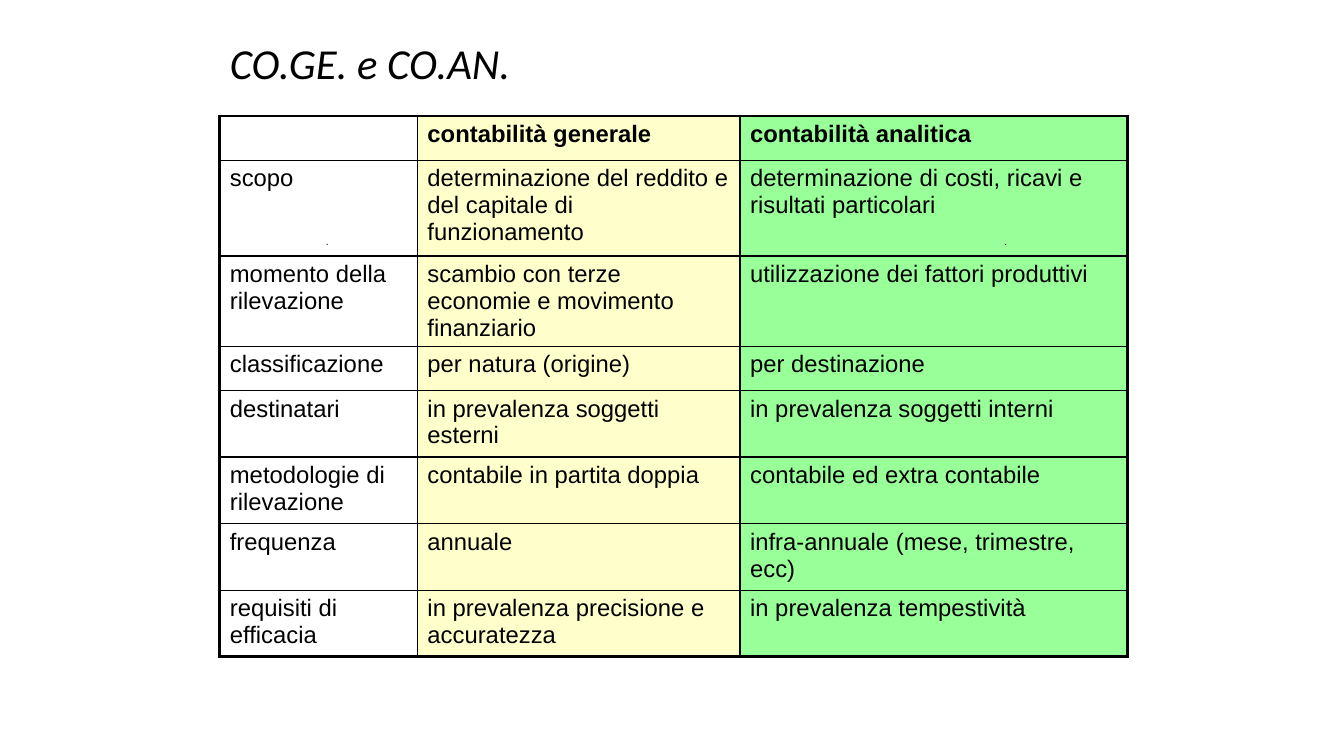
from lxml import etree
from pptx import Presentation
from pptx.dml.color import RGBColor
from pptx.enum.shapes import MSO_SHAPE
from pptx.enum.text import MSO_ANCHOR, MSO_AUTO_SIZE, PP_ALIGN
from pptx.oxml.ns import qn
from pptx.util import Inches, Pt

RECTANGLE = MSO_SHAPE.RECTANGLE
MIDDLE = MSO_ANCHOR.MIDDLE
NO_AUTOFIT = MSO_AUTO_SIZE.NONE
LEFT = PP_ALIGN.LEFT

HEADING = "CO.GE. e CO.AN."
COMPARISON = [
    ("", "contabilità generale", "contabilità analitica"),
    ("scopo", "determinazione del reddito e del capitale di funzionamento",
     "determinazione di costi, ricavi e risultati particolari"),
    ("momento della rilevazione", "scambio con terze economie e movimento finanziario",
     "utilizzazione dei fattori produttivi"),
    ("classificazione", "per natura (origine)", "per destinazione"),
    ("destinatari", "in prevalenza soggetti esterni", "in prevalenza soggetti interni"),
    ("metodologie di rilevazione", "contabile in partita doppia", "contabile ed extra contabile"),
    ("frequenza", "annuale", "infra-annuale (mese, trimestre, ecc)"),
    ("requisiti di efficacia", "in prevalenza precisione e accuratezza",
     "in prevalenza tempestività"),
]
COLUMN_WIDTHS = [1.96, 3.2, 3.84]
ROW_HEIGHTS = [0.44, 0.95, 0.8, 0.44, 0.66, 0.66, 0.66, 0.66]
TABLE_LEFT, TABLE_TOP = 2.18, 1.15
DOT_LEFTS, DOT_TOP, DOT_SIZE = [3.24, 9.97], 2.42, 0.01

THEME = {
    "ink": "000000",
    "columns": ["FFFFFF", "FFFFCC", "99FF99"],
    "heading": {"name": "Calibri", "size": Pt(30.5), "italic": True, "bold": False},
    "cell": {"name": "Arial", "size": Pt(17), "bold": False},
    "outer_line": Pt(2.25),
    "inner_line": Pt(1),
}
INK = RGBColor.from_string(THEME["ink"])
INSETS = {
    "margin_left": Inches(0.1), "margin_right": Inches(0.1),
    "margin_top": Inches(0.05), "margin_bottom": Inches(0.05),
}


def apply(target, values):
    for key, value in values.items():
        setattr(target, key, value)


def style_font(font, values):
    apply(font, values)
    font.color.rgb = INK


def draw_borders(cell, outer_sides):
    properties = cell._tc.get_or_add_tcPr()
    for side, is_outer in outer_sides.items():
        width = THEME["outer_line" if is_outer else "inner_line"]
        line = etree.SubElement(properties, qn(f"a:ln{side}"), w=str(int(width)))
        fill = etree.SubElement(line, qn("a:solidFill"))
        etree.SubElement(fill, qn("a:srgbClr"), val=THEME["ink"])


def add_heading(slide):
    heading = slide.shapes.title
    apply(heading, {"left": Inches(2.18), "top": Inches(0.33),
                    "width": Inches(9), "height": Inches(0.64)})
    frame = heading.text_frame
    frame.text = HEADING
    apply(frame, {**INSETS, "vertical_anchor": MIDDLE, "word_wrap": True,
                  "auto_size": NO_AUTOFIT})
    paragraph = frame.paragraphs[0]
    apply(paragraph, {"alignment": LEFT, "line_spacing": 0.9})
    style_font(paragraph.runs[0].font, THEME["heading"])


def add_comparison(slide):
    last_row, last_column = len(ROW_HEIGHTS) - 1, len(COLUMN_WIDTHS) - 1
    table = slide.shapes.add_table(
        len(ROW_HEIGHTS), len(COLUMN_WIDTHS), Inches(TABLE_LEFT), Inches(TABLE_TOP),
        Inches(sum(COLUMN_WIDTHS)), Inches(sum(ROW_HEIGHTS))).table
    apply(table, {"first_row": False, "horz_banding": False})
    for column, width in zip(table.columns, COLUMN_WIDTHS):
        column.width = Inches(width)
    for row, height in zip(table.rows, ROW_HEIGHTS):
        row.height = Inches(height)
    for r, entries in enumerate(COMPARISON):
        for c, entry in enumerate(entries):
            cell = table.cell(r, c)
            cell.text = entry
            apply(cell, INSETS)
            draw_borders(cell, {"L": c == 0, "R": c == last_column,
                                "T": r == 0, "B": r == last_row})
            cell.fill.solid()
            cell.fill.fore_color.rgb = RGBColor.from_string(THEME["columns"][c])
            style_font(cell.text_frame.paragraphs[0].font, {**THEME["cell"], "bold": r == 0})


def add_dots(slide):
    for left in DOT_LEFTS:
        dot = slide.shapes.add_shape(RECTANGLE, Inches(left), Inches(DOT_TOP),
                                     Inches(DOT_SIZE), Inches(DOT_SIZE))
        dot.shadow.inherit = False
        dot.fill.solid()
        dot.fill.fore_color.rgb = INK
        dot.line.fill.background()


def main():
    deck = Presentation()
    apply(deck, {"slide_width": Inches(13.33), "slide_height": Inches(7.5)})
    slide = deck.slides.add_slide(deck.slide_layouts[5])
    add_heading(slide)
    add_comparison(slide)
    add_dots(slide)
    deck.save("out.pptx")


if __name__ == "__main__":
    main()
